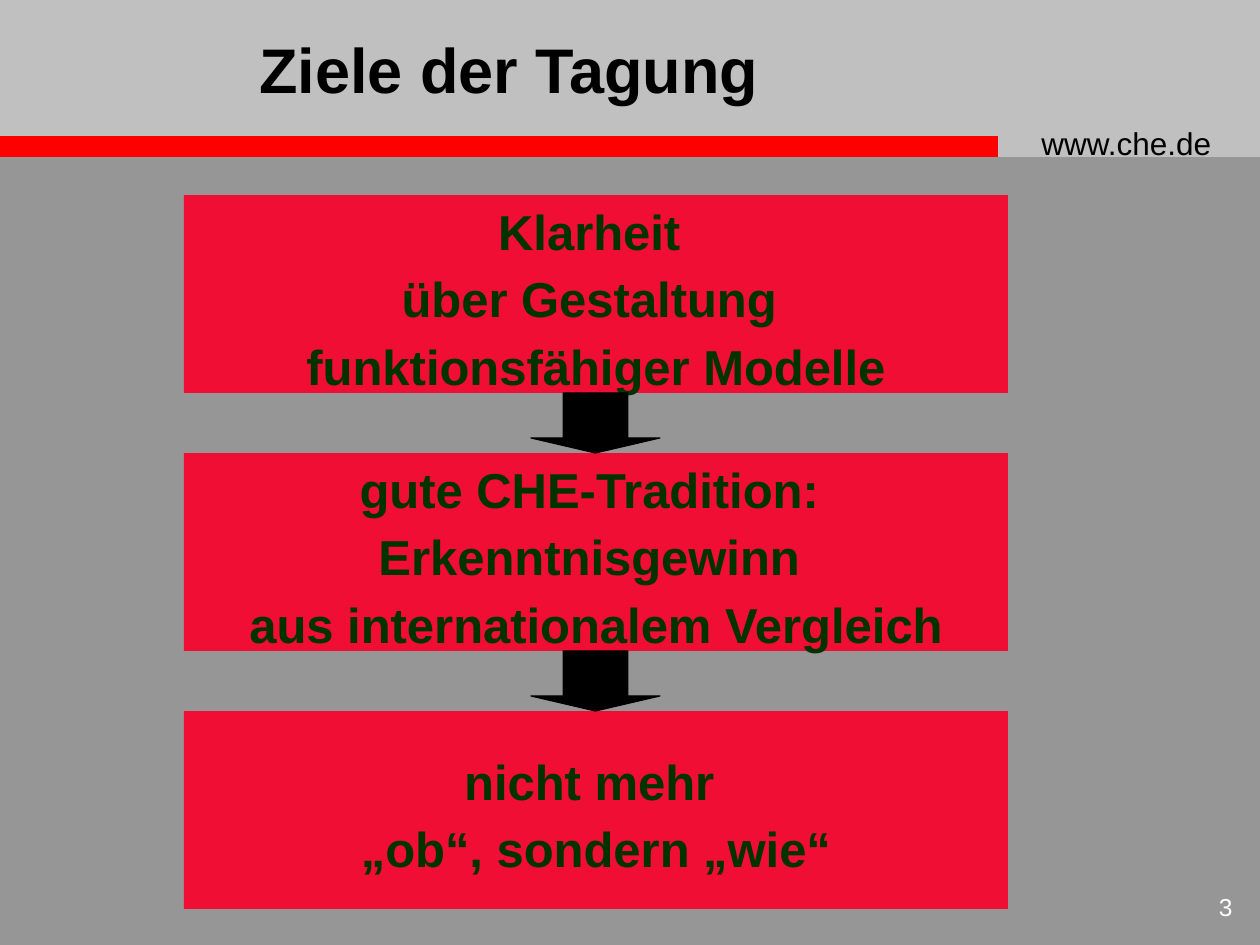
"""Build the slide "Ziele der Tagung" with three linked goal boxes."""
from typing import NamedTuple

from pptx import Presentation
from pptx import util as u
from pptx.dml.color import RGBColor
from pptx.enum import shapes, text

BLACK = RGBColor(0x00, 0x00, 0x00)
WHITE = RGBColor(0xFF, 0xFF, 0xFF)
GREY = RGBColor(0x96, 0x96, 0x96)
SILVER = RGBColor(0xC0, 0xC0, 0xC0)
RED = RGBColor(0xFF, 0x00, 0x00)
CRIMSON = RGBColor(0xF0, 0x0E, 0x34)
DARK_GREEN = RGBColor(0x00, 0x33, 0x00)

PX_PER_INCH = 126
BOX_X, BOX_Y, BOX_W, BOX_H = 184, 195, 824, 198
ARROW_W, ARROW_H = 129, 60
BOX_STEP = BOX_H + ARROW_H


class Rect(NamedTuple):
    x: int
    y: int
    w: int
    h: int


GOALS = [
    ["Klarheit ", "über Gestaltung ", "funktionsfähiger Modelle"],
    ["gute CHE-Tradition: ", "Erkenntnisgewinn ", "aus internationalem Vergleich"],
    ["nicht mehr ", "„ob“, sondern „wie“"],
]


def px(n: int) -> u.Emu:
    return u.Emu(round(n * 914400 / PX_PER_INCH))


def emu(rect: Rect) -> list[u.Emu]:
    return [px(n) for n in rect]


def add_filled(slide, kind, rect: Rect, color: RGBColor):
    sp = slide.shapes.add_shape(kind, *emu(rect))
    sp.shadow.inherit = False
    sp.fill.solid()
    sp.fill.fore_color.rgb = color
    sp.line.fill.background()
    return sp


def write(tf, lines: list[str], size: int, color: RGBColor, align, bold=False, spacing=None):
    for i, line in enumerate(lines):
        p = tf.paragraphs[0] if i == 0 else tf.add_paragraph()
        p.text = line
        p.alignment = align
        p.line_spacing = spacing
        p.font.name = "Arial"
        p.font.size = u.Pt(size)
        p.font.bold = bold
        p.font.color.rgb = color


def add_label(slide, rect: Rect, label: str, size: int, color: RGBColor, align):
    tf = slide.shapes.add_textbox(*emu(rect)).text_frame
    tf.word_wrap = True
    write(tf, [label], size, color, align)


def add_goal(slide, y: int, lines: list[str]):
    rect = Rect(BOX_X, y, BOX_W, BOX_H)
    tf = add_filled(slide, shapes.MSO_SHAPE.RECTANGLE, rect, CRIMSON).text_frame
    tf.word_wrap = False
    tf.vertical_anchor = text.MSO_ANCHOR.MIDDLE
    write(tf, lines, 28, DARK_GREEN, text.PP_ALIGN.CENTER, True, 1.15)


def add_arrow(slide, y: int):
    rect = Rect(BOX_X + (BOX_W - ARROW_W) // 2, y, ARROW_W, ARROW_H)
    sp = add_filled(slide, shapes.MSO_SHAPE.DOWN_ARROW, rect, BLACK)
    sp.adjustments[0] = 0.5
    sp.adjustments[1] = 0.25
    sp.line.color.rgb = BLACK
    sp.line.width = u.Pt(0.75)


def add_title(slide, rect: Rect, label: str):
    sp = slide.shapes.title
    sp.left, sp.top, sp.width, sp.height = emu(rect)
    tf = sp.text_frame
    tf.vertical_anchor = text.MSO_ANCHOR.MIDDLE
    write(tf, [label], 36, BLACK, text.PP_ALIGN.CENTER, True)
    slide.shapes._spTree.append(sp._element)


def main():
    prs = Presentation()
    prs.slide_width, prs.slide_height = px(1260), px(945)
    slide = prs.slides.add_slide(prs.slide_layouts[5])
    slide.background.fill.solid()
    slide.background.fill.fore_color.rgb = GREY

    add_filled(slide, shapes.MSO_SHAPE.RECTANGLE, Rect(0, 0, 1260, 157), SILVER)
    add_filled(slide, shapes.MSO_SHAPE.RECTANGLE, Rect(0, 136, 998, 21), RED)
    add_label(slide, Rect(1029, 118, 221, 50), "www.che.de", 18, BLACK, text.PP_ALIGN.LEFT)
    add_label(slide, Rect(1172, 886, 73, 53), "3", 14, WHITE, text.PP_ALIGN.RIGHT)
    add_title(slide, Rect(0, 0, 1018, 136), "Ziele der Tagung")

    for i, lines in enumerate(GOALS):
        y = BOX_Y + i * BOX_STEP
        add_goal(slide, y, lines)
        if i:
            add_arrow(slide, y - ARROW_H)

    prs.save("out.pptx")


if __name__ == "__main__":
    main()
